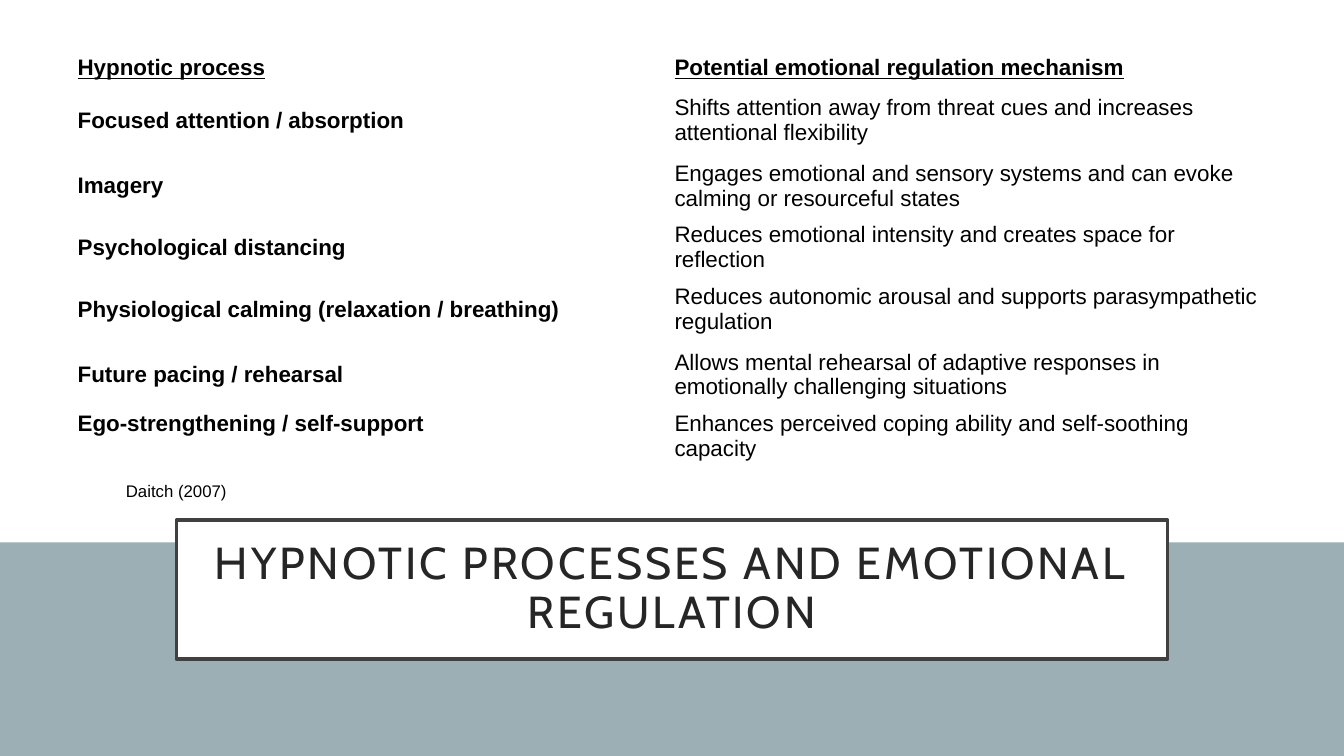
import pptx
import pptx.util
import pptx.dml.color
import pptx.enum.text
import pptx.enum.shapes

WIDTH, HEIGHT = 13.33, 7.5
TITLE = "HYPNOTIC PROCESSES AND EMOTIONAL REGULATION"
CITATION = "Daitch (2007)"
ROWS = [
    ("Hypnotic process", "Potential emotional regulation mechanism"),
    ("Focused attention / absorption",
     "Shifts attention away from threat cues and increases attentional flexibility"),
    ("Imagery",
     "Engages emotional and sensory systems and can evoke calming or resourceful states"),
    ("Psychological distancing",
     "Reduces emotional intensity and creates space for reflection"),
    ("Physiological calming (relaxation / breathing)",
     "Reduces autonomic arousal and supports parasympathetic regulation"),
    ("Future pacing / rehearsal",
     "Allows mental rehearsal of adaptive responses in emotionally challenging situations"),
    ("Ego-strengthening / self-support",
     "Enhances perceived coping ability and self-soothing capacity"),
]
COLUMN_WIDTHS = (5.92, 6.03)
SHORT_ROW, TALL_ROW = 0.39, 0.65
ROW_HEIGHTS = [SHORT_ROW if i % 3 == 0 else TALL_ROW for i in range(len(ROWS))]

Inches, Pt = pptx.util.Inches, pptx.util.Pt
ANCHOR, ALIGN = pptx.enum.text.MSO_ANCHOR, pptx.enum.text.PP_ALIGN


def rgb(value):
    """Return a colour from a hex string."""
    return pptx.dml.color.RGBColor.from_string(value)


def write(tf, text, size=16, font="Arial", color="000000", bold=False,
          underline=False, align=ALIGN.LEFT, line_spacing=None, tracking=None):
    """Write one formatted paragraph into a text frame."""
    p = tf.paragraphs[0]
    p.alignment = align
    if line_spacing:
        p.line_spacing = line_spacing
    r = p.add_run()
    r.text = text
    r.font.size, r.font.name = Pt(size), font
    r.font.bold, r.font.underline = bold, underline
    r.font.color.rgb = rgb(color)
    if tracking:
        r.font._element.set("spc", str(tracking * 100))


def add_rect(s, left, top, width, height, fill, line=None, line_width=0):
    """Add a flat rectangle with an optional outline."""
    sp = s.shapes.add_shape(pptx.enum.shapes.MSO_SHAPE.RECTANGLE,
                            *map(Inches, (left, top, width, height)))
    sp.shadow.inherit = False
    sp.fill.solid()
    sp.fill.fore_color.rgb = rgb(fill)
    if line:
        sp.line.color.rgb = rgb(line)
        sp.line.width = Pt(line_width)
    else:
        sp.line.fill.background()
    return sp


def add_title(s):
    """Add the lower band and the framed title."""
    band_top, title_width = 5.38, 9.83
    add_rect(s, 0, band_top, WIDTH, HEIGHT - band_top, "9BAFB5")
    sp = add_rect(s, (WIDTH - title_width) / 2, 5.16, title_width, 1.38,
                  "FFFFFF", "404040", 2.5)
    tf = sp.text_frame
    tf.word_wrap, tf.vertical_anchor = True, ANCHOR.MIDDLE
    tf.margin_left = tf.margin_right = Inches(0.3)
    tf.margin_top = tf.margin_bottom = Inches(0.2)
    write(tf, TITLE, size=32, font="Cabin", color="262626",
          align=ALIGN.CENTER, line_spacing=0.9, tracking=2)


def add_process_table(s):
    """Add the table of processes and mechanisms."""
    table = s.shapes.add_table(
        len(ROWS), len(COLUMN_WIDTHS), Inches(0.69), Inches(0.48),
        Inches(sum(COLUMN_WIDTHS)), Inches(sum(ROW_HEIGHTS))).table
    table.first_row = table.horz_banding = False
    for column, width in zip(table.columns, COLUMN_WIDTHS):
        column.width = Inches(width)
    for i, texts in enumerate(ROWS):
        table.rows[i].height = Inches(ROW_HEIGHTS[i])
        for j, text in enumerate(texts):
            cell = table.cell(i, j)
            cell.fill.background()
            cell.margin_left = cell.margin_right = Inches(0.08)
            cell.margin_top = cell.margin_bottom = Inches(0.04)
            cell.vertical_anchor = ANCHOR.MIDDLE
            write(cell.text_frame, text, bold=i == 0 or j == 0, underline=i == 0)
    table.cell(len(ROWS) - 1, 0).vertical_anchor = ANCHOR.TOP


def add_citation(s):
    """Add the source line under the table."""
    tf = s.shapes.add_textbox(*map(Inches, (1.15, 4.72, 1.21, 0.3))).text_frame
    tf.word_wrap = False
    tf.auto_size = pptx.enum.text.MSO_AUTO_SIZE.SHAPE_TO_FIT_TEXT
    write(tf, CITATION, size=12)


def main():
    """Build the slide and save it."""
    prs = pptx.Presentation()
    prs.slide_width, prs.slide_height = Inches(WIDTH), Inches(HEIGHT)
    s = prs.slides.add_slide(prs.slide_layouts[6])
    add_title(s)
    add_process_table(s)
    add_citation(s)
    prs.save("out.pptx")


if __name__ == "__main__":
    main()
